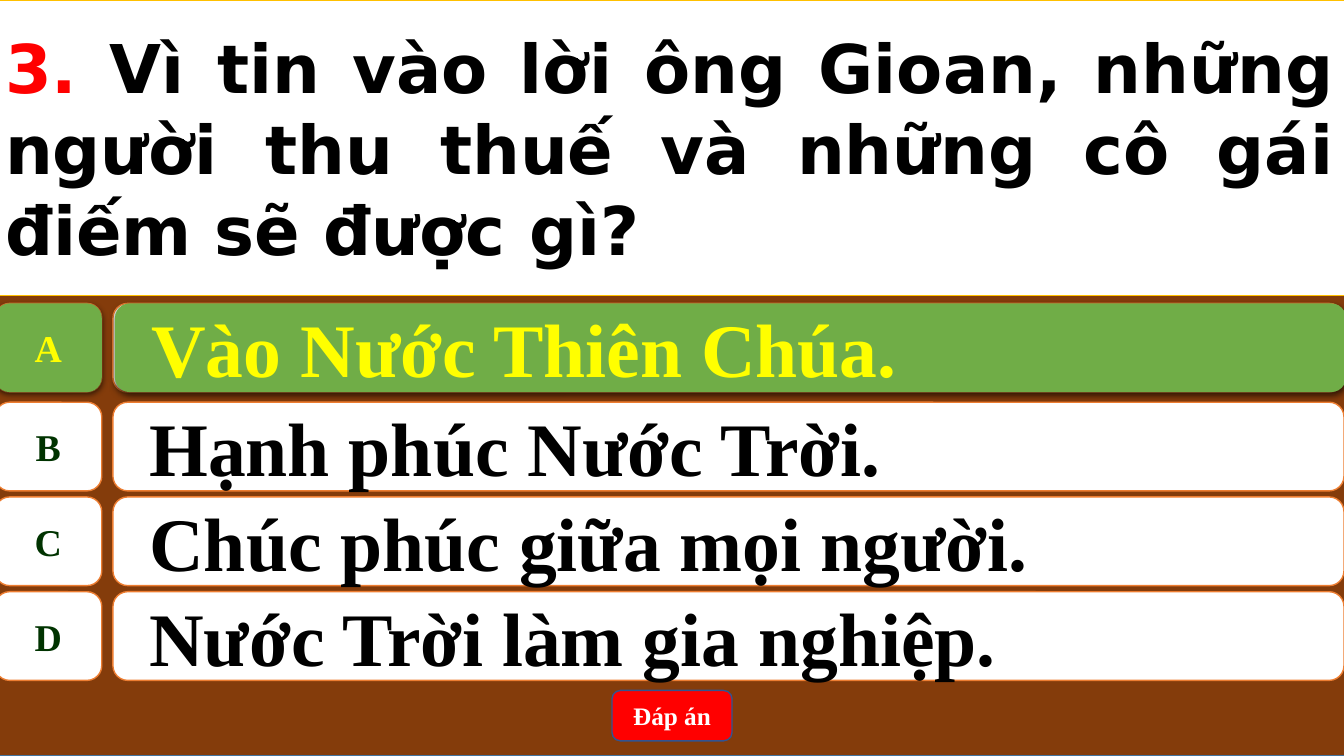
from dataclasses import dataclass

from lxml.etree import SubElement
from pptx import Presentation
from pptx.dml.color import RGBColor
from pptx.enum.shapes import MSO_SHAPE
from pptx.enum.text import MSO_ANCHOR, MSO_AUTO_SIZE, PP_ALIGN
from pptx.oxml.ns import qn
from pptx.util import Inches, Pt


@dataclass(frozen=True)
class Theme:
    brown: str = "843C0B"
    blue: str = "43739E"
    button_edge: str = "325491"
    orange: str = "ED7D31"
    gold: str = "FFC000"
    white: str = "FFFFFF"
    black: str = "000000"
    red: str = "FF0000"
    green: str = "70AD47"
    dark_green: str = "003300"
    yellow: str = "FFFF00"
    serif: str = "Times New Roman"
    sans: str = "DejaVu Sans"
    question_size: int = 48
    answer_size: int = 54
    letter_size: int = 27
    button_size: int = 18


THEME = Theme()
LEFT, FULL_WIDTH = -0.05, 13.39
ROW_HEIGHT = 0.88
ANSWERS = [
    ("A", "Vào Nước Thiên Chúa.", 3.01),
    ("B", "Hạnh phúc Nước Trời.", 3.99),
    ("C", "Chúc phúc giữa mọi người.", 4.93),
    ("D", "Nước Trời làm gia nghiệp.", 5.87),
]


def paint(shape, fill, line=None, width=1):
    shape.fill.solid()
    shape.fill.fore_color.rgb = RGBColor.from_string(fill)
    if line:
        shape.line.color.rgb = RGBColor.from_string(line)
        shape.line.width = Pt(width)
    else:
        shape.line.fill.background()


def add_box(shapes, kind, box, fill, line=None):
    shape = shapes.add_shape(kind, *map(Inches, box))
    shape.shadow.inherit = False
    paint(shape, fill, line)
    return shape


def add_shadow(shape):
    effects = shape.element.spPr.find(qn("a:effectLst"))
    shadow = SubElement(effects, qn("a:outerShdw"), blurRad=str(Pt(4.5)),
                        dist=str(Pt(1.5)), dir="5400000", rotWithShape="0")
    color = SubElement(shadow, qn("a:srgbClr"), val=THEME.black)
    SubElement(color, qn("a:alpha"), val="63000")


def write(shape, runs, size, font=THEME.serif, align=PP_ALIGN.CENTER, wrap=True):
    """Fill a shape with one bold paragraph of (text, colour) runs."""
    tf = shape.text_frame
    frame_format = {"word_wrap": wrap, "auto_size": MSO_AUTO_SIZE.NONE,
                    "vertical_anchor": MSO_ANCHOR.MIDDLE}
    for name, value in frame_format.items():
        setattr(tf, name, value)
    p = tf.paragraphs[0]
    p.alignment = align
    for text, color in runs:
        r = p.add_run()
        r.text = text
        for name, value in {"name": font, "size": Pt(size), "bold": True}.items():
            setattr(r.font, name, value)
        r.font.color.rgb = RGBColor.from_string(color)
    return p


def add_answer(s, letter, answer, top, correct=False):
    """Add a letter tile and its answer bar; the correct one is green."""
    group = s.shapes.add_group_shape()
    fill, line = (THEME.green, None) if correct else (THEME.white, THEME.orange)
    bar_left = 1.14 if correct else 1.12
    tile = add_box(group.shapes, MSO_SHAPE.FLOWCHART_ALTERNATE_PROCESS,
                   (LEFT, top, 1.06, ROW_HEIGHT), fill, line)
    bar = add_box(group.shapes, MSO_SHAPE.ROUNDED_RECTANGLE,
                  (bar_left, top, 12.21, ROW_HEIGHT), fill, line)
    write(tile, [(letter, THEME.yellow if correct else THEME.dark_green)],
          THEME.letter_size, wrap=False)
    p = write(bar, [(answer, THEME.yellow if correct else THEME.black)],
              THEME.answer_size, align=PP_ALIGN.LEFT)
    p.level = 1
    pPr = p._p.get_or_add_pPr()
    pPr.set("marL", str(Inches(0.5)))
    pPr.set("indent", str(Inches(-0.28)))
    if correct:
        add_shadow(tile)
        add_shadow(bar)


def add_question(s, number, question):
    title = s.shapes.title
    box = {"left": LEFT, "top": 0, "width": FULL_WIDTH, "height": 2.93}
    for name, value in box.items():
        setattr(title, name, Inches(value))
    paint(title, THEME.white, THEME.gold, 0.5)
    write(title, [(number, THEME.red), (question, THEME.black)],
          THEME.question_size, THEME.sans, PP_ALIGN.JUSTIFY)
    title.element.getparent().append(title.element)


def main():
    prs = Presentation()
    prs.slide_width, prs.slide_height = Inches(13.33), Inches(7.5)
    s = prs.slides.add_slide(prs.slide_layouts[5])

    add_box(s.shapes, MSO_SHAPE.RECTANGLE, (LEFT, 0, FULL_WIDTH, 7.5),
            THEME.brown, THEME.blue)
    for letter, answer, top in ANSWERS:
        add_answer(s, letter, answer, top)
    add_answer(s, *ANSWERS[0], correct=True)

    button = add_box(s.shapes, MSO_SHAPE.ROUNDED_RECTANGLE,
                     (6.07, 6.85, 1.19, 0.5), THEME.red, THEME.button_edge)
    write(button, [("Đáp án", THEME.white)], THEME.button_size)
    add_question(s, "3. ", "Vì tin vào lời ông Gioan, những người thu thuế "
                 "và những cô gái điếm sẽ được gì?")
    prs.save("out.pptx")


if __name__ == "__main__":
    main()
